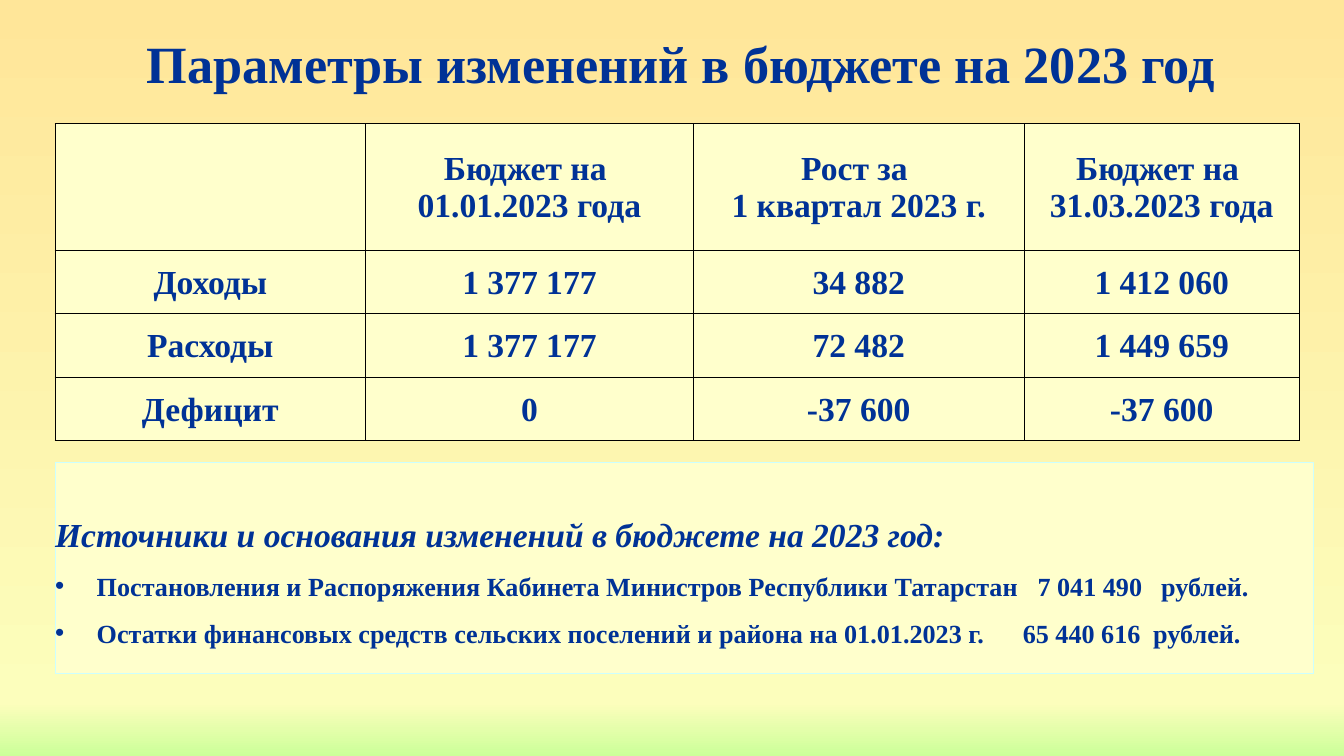
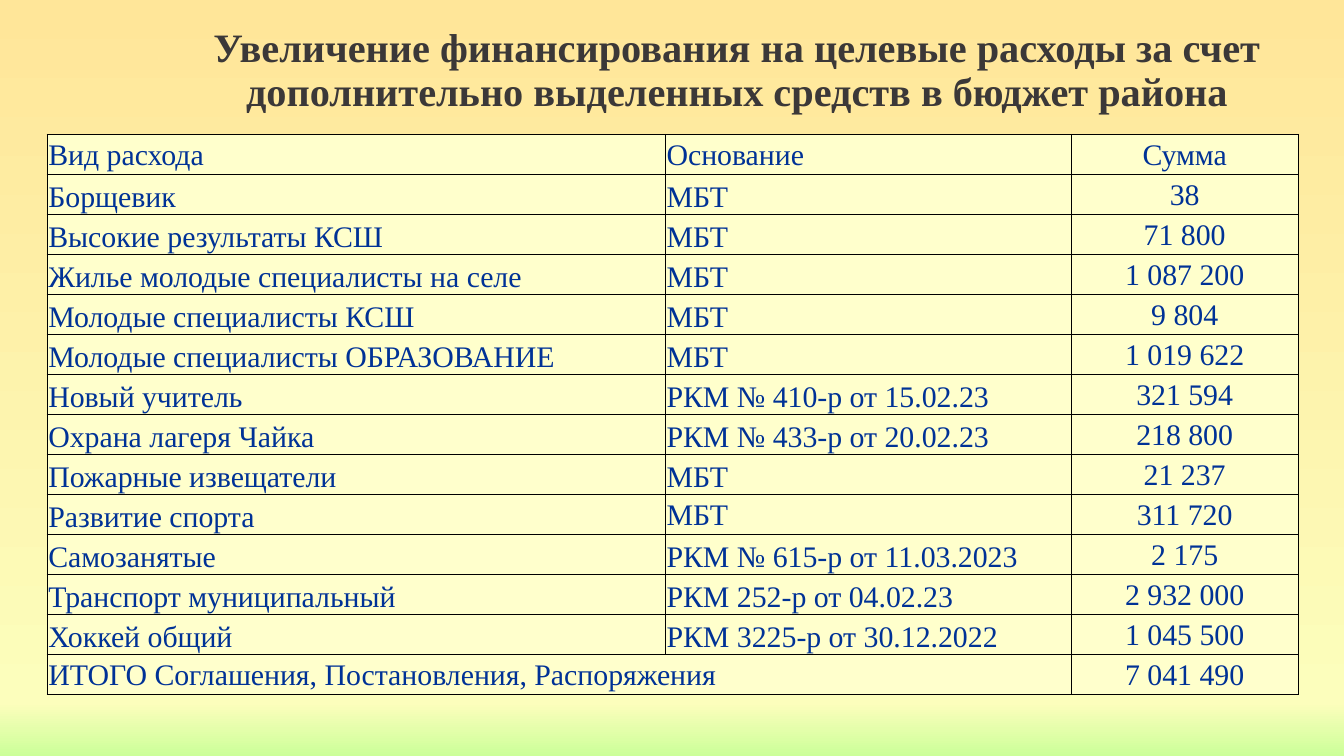
from dataclasses import dataclass

from lxml import etree
from pptx import Presentation
from pptx.dml.color import RGBColor
from pptx.enum.text import MSO_ANCHOR, MSO_AUTO_SIZE, PP_ALIGN
from pptx.oxml.ns import qn
from pptx.util import Inches, Pt

LEFT, CENTER = PP_ALIGN.LEFT, PP_ALIGN.CENTER
MIDDLE, BOTTOM = MSO_ANCHOR.MIDDLE, MSO_ANCHOR.BOTTOM
NO_AUTOFIT = MSO_AUTO_SIZE.NONE
TITLE_AND_LIST, TITLE_ONLY = 1, 5
SLIDE_WIDTH = Inches(10)
SLIDE_HEIGHT = SLIDE_WIDTH * 9 // 16


@dataclass(frozen=True)
class Theme:
    font: str = "Times New Roman"
    navy: str = "003296"
    charcoal: str = "3B3838"
    cream: str = "FFFFCC"
    pale_cyan: str = "CCFFFF"
    border: str = "000000"
    backdrop: tuple = ((0, "FFE699"), (93, "FCFEBC"), (100, "CCFF99"))
    line_width: float = 0.5
    main_title: float = 28
    long_title: float = 21.6
    heading: float = 18
    detail: float = 16
    source_item: float = 14


THEME = Theme()

BUDGET = [
    ["", "Бюджет на \n01.01.2023 года", "Рост за \n1 квартал 2023 г.", "Бюджет на \n31.03.2023 года"],
    ["Доходы", "1 377 177", "34 882", "1 412 060"],
    ["Расходы", "1 377 177", "72 482", "1 449 659"],
    ["Дефицит", "0", "-37 600", "-37 600"],
]
SOURCES_HEADING = "Источники и основания изменений в бюджете на 2023 год:"
SOURCES = {
    "Постановления и Распоряжения Кабинета Министров Республики Татарстан\t7 041 490\tрублей.": (7.31, 8.23),
    "Остатки финансовых средств сельских поселений и района на 01.01.2023 г.\t65 440 616\tрублей.": (7.2, 8.17),
}
SPENDING = [
    ["Вид расхода", "Основание", "Сумма"],
    ["Борщевик", "МБТ", "38"],
    ["Высокие результаты КСШ", "МБТ", "71 800"],
    ["Жилье молодые специалисты на селе", "МБТ", "1 087 200"],
    ["Молодые специалисты КСШ", "МБТ", "9 804"],
    ["Молодые специалисты ОБРАЗОВАНИЕ", "МБТ", "1 019 622"],
    ["Новый учитель", "РКМ № 410-р от 15.02.23", "321 594"],
    ["Охрана лагеря Чайка", "РКМ № 433-р от 20.02.23", "218 800"],
    ["Пожарные извещатели", "МБТ", "21 237"],
    ["Развитие спорта", "МБТ", "311 720"],
    ["Самозанятые", "РКМ № 615-р от 11.03.2023", "2 175"],
    ["Транспорт муниципальный", "РКМ 252-р от 04.02.23", "2 932 000"],
    ["Хоккей общий", "РКМ 3225-р от 30.12.2022", "1 045 500"],
    ["ИТОГО Соглашения, Постановления, Распоряжения", "", "7 041 490"],
]


def apply(target, formats):
    for name, value in formats.items():
        setattr(target, name, value)


def margins(left, top, right, bottom):
    sides = dict(left=left, top=top, right=right, bottom=bottom)
    return {f"margin_{side}": Inches(size) for side, size in sides.items()}


def place(part, box):
    apply(part, dict(zip(("left", "top", "width", "height"), map(Inches, box))))


def style_paragraph(paragraph, size, color=THEME.navy, bold=True, italic=False,
                    align=LEFT, spacing=1.0):
    apply(paragraph, dict(alignment=align, line_spacing=spacing,
                          space_before=Pt(0), space_after=Pt(0)))
    for font in [paragraph.font, *(run.font for run in paragraph.runs)]:
        apply(font, dict(name=THEME.font, size=Pt(size), bold=bold, italic=italic))
        font.color.rgb = RGBColor.from_string(color)


def add_color(parent, color):
    etree.SubElement(parent, qn("a:srgbClr"), val=color)


def paint_backdrop(slide):
    fill = slide.background.fill
    fill.gradient()
    gradient = slide.background._cSld.find(".//" + qn("a:gradFill"))
    for child in list(gradient):
        gradient.remove(child)
    stops = etree.SubElement(gradient, qn("a:gsLst"))
    for percent, color in THEME.backdrop:
        add_color(etree.SubElement(stops, qn("a:gs"), pos=str(percent * 1000)), color)
    etree.SubElement(gradient, qn("a:lin"), ang="5400000", scaled="0")


def add_slide(deck, layout, title, box, size, color):
    slide = deck.slides.add_slide(deck.slide_layouts[layout])
    paint_backdrop(slide)
    heading = slide.shapes.title
    place(heading, box)
    heading.text_frame.text = title
    apply(heading.text_frame, dict(vertical_anchor=MIDDLE, word_wrap=True, auto_size=NO_AUTOFIT))
    style_paragraph(heading.text_frame.paragraphs[0], size, color, align=CENTER, spacing=0.9)
    return slide


def outline_cell(cell):
    properties = cell._tc.get_or_add_tcPr()
    for position, side in enumerate(("lnL", "lnR", "lnT", "lnB")):
        line = etree.Element(qn("a:" + side), w=str(Pt(THEME.line_width)))
        add_color(etree.SubElement(line, qn("a:solidFill")), THEME.border)
        properties.insert(position, line)


def draw_table(slide, box, rows, column_widths, row_weights, size, bold, align, anchor):
    table = slide.shapes.add_table(len(rows), len(column_widths), *map(Inches, box)).table
    apply(table, dict(first_row=False, horz_banding=False))
    for column, width in zip(table.columns, column_widths):
        column.width = Inches(width)
    for row, weight in zip(table.rows, row_weights):
        row.height = Inches(box[3] * weight / sum(row_weights))
    for r, texts in enumerate(rows):
        for c, text in enumerate(texts):
            cell = table.cell(r, c)
            cell.text_frame.text = text
            apply(cell, margins(0.01, 0.01, 0.01, 0))
            cell.vertical_anchor = anchor(r, c)
            cell.fill.solid()
            cell.fill.fore_color.rgb = RGBColor.from_string(THEME.cream)
            outline_cell(cell)
            for paragraph in cell.text_frame.paragraphs:
                style_paragraph(paragraph, size, bold=bold, align=align(c))
    return table


def set_bullet(paragraph, symbol=None, indent=0, tabs=()):
    properties = paragraph._p.get_or_add_pPr()
    properties.set("marL", str(Inches(indent)))
    properties.set("indent", str(-Inches(indent)))
    if symbol:
        etree.SubElement(properties, qn("a:buChar"), char=symbol)
    else:
        etree.SubElement(properties, qn("a:buNone"))
    if tabs:
        tab_list = etree.SubElement(properties, qn("a:tabLst"))
        for stop in tabs:
            etree.SubElement(tab_list, qn("a:tab"), pos=str(Inches(stop)), algn="l")
    properties.append(properties.find(qn("a:defRPr")))


def fill_sources(panel, box):
    place(panel, box)
    panel.fill.solid()
    panel.fill.fore_color.rgb = RGBColor.from_string(THEME.cream)
    panel.line.color.rgb = RGBColor.from_string(THEME.pale_cyan)
    panel.line.width = Pt(THEME.line_width)
    frame = panel.text_frame
    frame.text = "\n".join([SOURCES_HEADING, *SOURCES])
    apply(frame, dict(vertical_anchor=MIDDLE, word_wrap=True, auto_size=NO_AUTOFIT,
                      **margins(0, 0.05, 0, 0)))
    heading, *items = frame.paragraphs
    style_paragraph(heading, THEME.heading, italic=True, spacing=1.5)
    set_bullet(heading)
    for item, tabs in zip(items, SOURCES.values()):
        style_paragraph(item, THEME.source_item, spacing=1.5)
        set_bullet(item, "•", 0.31, tabs)


def build_budget_slide(deck):
    slide = add_slide(deck, TITLE_AND_LIST, "Параметры изменений в бюджете на 2023 год",
                      (0.72, 0.03, 8.69, 0.93), THEME.main_title, THEME.navy)
    draw_table(slide, (0.41, 0.92, 9.26, 2.36), BUDGET, (2.31, 2.44, 2.46, 2.05),
               (2, 1, 1, 1), THEME.heading, True,
               align=lambda c: CENTER, anchor=lambda r, c: MIDDLE)
    fill_sources(slide.placeholders[1], (0.41, 3.44, 9.36, 1.57))


def spending_anchor(row, column):
    total = len(SPENDING) - 1
    sport_basis = SPENDING[row][0] == "Развитие спорта" and column == 1
    return MIDDLE if row in (0, total) or column == 2 or sport_basis else BOTTOM


def build_spending_slide(deck):
    slide = add_slide(deck, TITLE_ONLY,
                      "Увеличение финансирования на целевые расходы за счет "
                      "дополнительно выделенных средств в бюджет района",
                      (1.3, 0.06, 8.37, 0.94), THEME.long_title, THEME.charcoal)
    table = draw_table(slide, (0.35, 1, 9.31, 4.17), SPENDING, (4.6, 3.02, 1.69),
                       [1] * len(SPENDING), THEME.detail, False,
                       align=lambda c: CENTER if c == 2 else LEFT, anchor=spending_anchor)
    total = len(SPENDING) - 1
    table.cell(total, 0).merge(table.cell(total, 1))


def main():
    deck = Presentation()
    apply(deck, dict(slide_width=SLIDE_WIDTH, slide_height=SLIDE_HEIGHT))
    build_budget_slide(deck)
    build_spending_slide(deck)
    deck.save("out.pptx")


if __name__ == "__main__":
    main()
